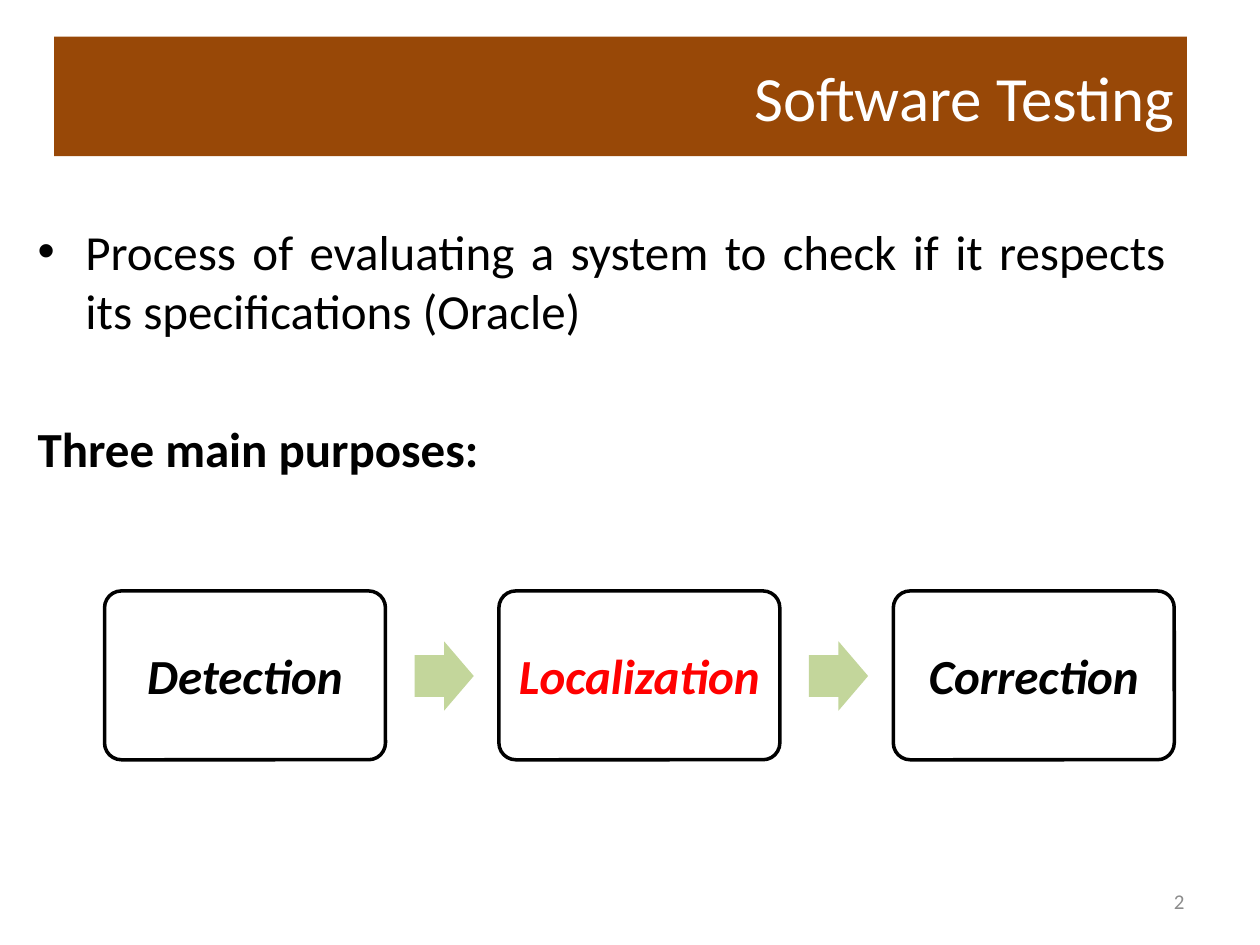
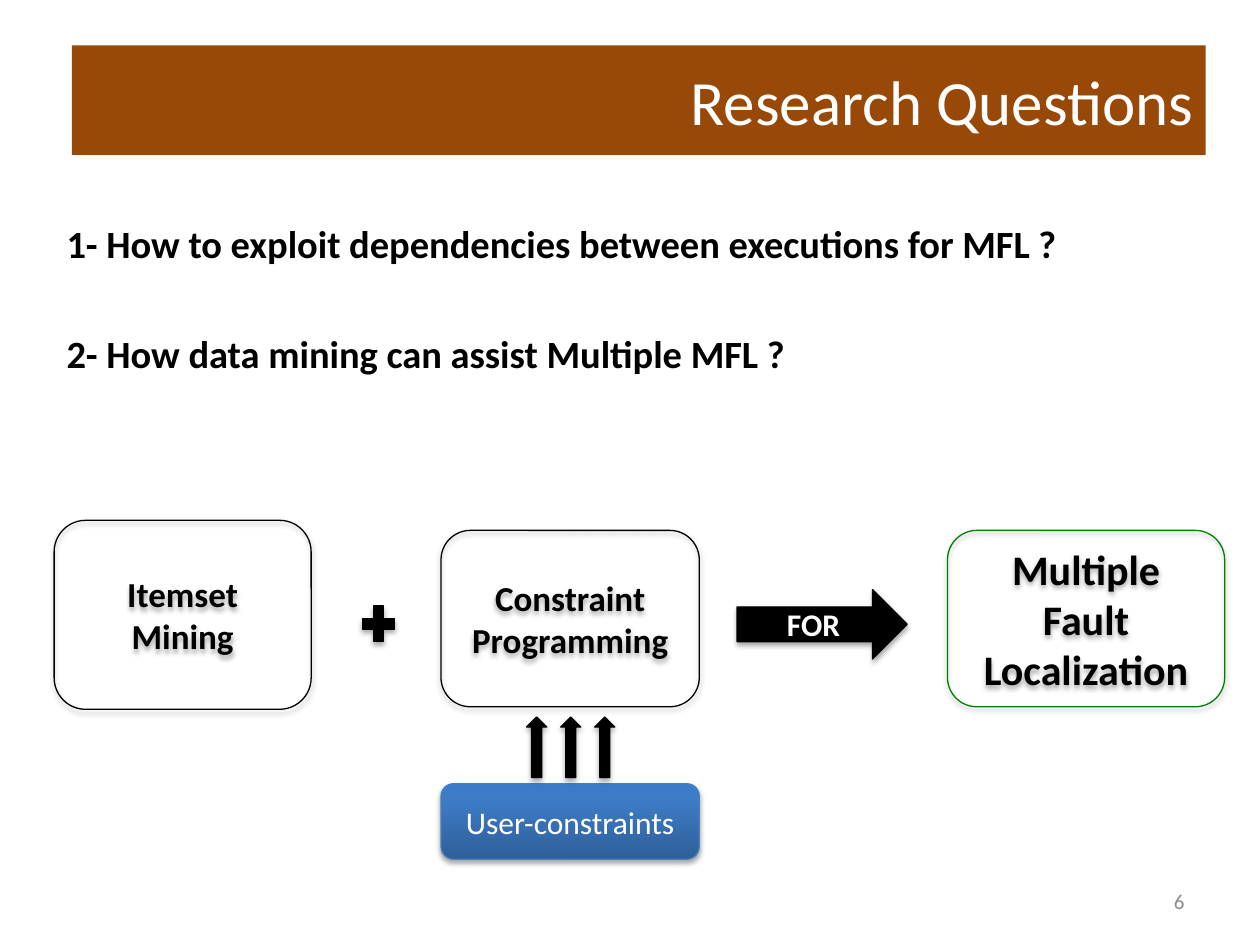
from copy import deepcopy
from dataclasses import dataclass, field
from typing import Any

from pptx import Presentation
from pptx.dml.color import RGBColor
from pptx.enum.shapes import MSO_SHAPE
from pptx.enum.text import MSO_ANCHOR, PP_ALIGN
from pptx.oxml.ns import qn
from pptx.oxml.xmlchemy import OxmlElement
from pptx.util import Inches, Pt

COLORS = {
    "band": "984807", "white": "FFFFFF", "black": "000000", "red": "FF0000",
    "green": "008000", "arrow": "C3D69B", "number": "8C8C8C",
    "blue_edge": "4B7EBC", "blue_low": "2F5F99", "blue_mid": "3D7CC7", "blue_top": "3A7CCB",
}
BLUE_GRADIENT = [(0, "blue_low"), (0.8, "blue_mid"), (1, "blue_top")]


@dataclass
class Style:
    size: float = 20
    color: str = "black"
    bold: bool = True
    italic: bool = False
    align: Any = PP_ALIGN.CENTER


@dataclass
class Figure:
    left: float
    top: float
    width: float
    height: float
    kind: Any = MSO_SHAPE.ROUNDED_RECTANGLE
    fill: str | list | None = None
    line: str | None = "black"
    line_width: float = 0.75
    adjustments: tuple[float, ...] = ()
    shadow: bool = True
    text: str = ""
    style: Style = field(default_factory=Style)
    inset: float = 0.1


TITLE = Style(36, "white", bold=False, align=PP_ALIGN.RIGHT)
NUMBER = Style(12, "number", bold=False, align=PP_ALIGN.RIGHT)
QUESTION = Style(22, align=PP_ALIGN.LEFT)


def rgb(name: str) -> RGBColor:
    return RGBColor.from_string(COLORS[name])


def assign(target: Any, values: dict[str, Any]) -> None:
    for name, value in values.items():
        setattr(target, name, value)


def write(para: Any, text: str, style: Style) -> None:
    para.alignment = style.align
    span = para.add_run()
    span.text = text
    assign(span.font, {"name": "Calibri", "size": Pt(style.size),
                       "bold": style.bold, "italic": style.italic})
    span.font.color.rgb = rgb(style.color)


def add_text(page: Any, left: float, top: float, width: float, height: float,
             text: str, style: Style, anchor: Any = MSO_ANCHOR.TOP) -> Any:
    box = page.shapes.add_textbox(Inches(left), Inches(top), Inches(width), Inches(height))
    assign(box.text_frame, {"word_wrap": True, "vertical_anchor": anchor})
    write(box.text_frame.paragraphs[0], text, style)
    return box.text_frame


def add_drop_shadow(shape: Any) -> None:
    shadow = OxmlElement("a:outerShdw")
    for name, value in {"blurRad": Pt(3.1), "dist": Pt(1.8), "dir": 90 * 60000,
                        "rotWithShape": 0}.items():
        shadow.set(name, str(int(value)))
    color = OxmlElement("a:srgbClr")
    color.set("val", COLORS["black"])
    alpha = OxmlElement("a:alpha")
    alpha.set("val", "35000")
    color.append(alpha)
    shadow.append(color)
    shape._element.spPr.find(qn("a:effectLst")).append(shadow)


def fill_gradient(shape: Any, stops: list[tuple[float, str]]) -> None:
    """Fill from bottom to top with three or more stops."""
    shape.fill.gradient()
    shape.fill.gradient_angle = 90
    stop_list = shape._element.spPr.find(".//" + qn("a:gsLst"))
    while len(stop_list) < len(stops):
        stop_list.append(deepcopy(stop_list[-1]))
    for stop, (position, name) in zip(shape.fill.gradient_stops, stops):
        stop.position = position
        stop.color.rgb = rgb(name)


def draw(page: Any, figure: Figure) -> None:
    shape = page.shapes.add_shape(figure.kind, Inches(figure.left), Inches(figure.top),
                                  Inches(figure.width), Inches(figure.height))
    shape.shadow.inherit = False
    for index, value in enumerate(figure.adjustments):
        shape.adjustments[index] = value
    if figure.fill is None:
        shape.fill.background()
    elif isinstance(figure.fill, list):
        fill_gradient(shape, figure.fill)
    else:
        shape.fill.solid()
        shape.fill.fore_color.rgb = rgb(figure.fill)
    if figure.line is None:
        shape.line.fill.background()
    else:
        shape.line.color.rgb = rgb(figure.line)
        shape.line.width = Pt(figure.line_width)
    if figure.shadow:
        add_drop_shadow(shape)
    if figure.text:
        frame = shape.text_frame
        assign(frame, {"word_wrap": True, "vertical_anchor": MSO_ANCHOR.MIDDLE,
                       "margin_left": Inches(figure.inset),
                       "margin_right": Inches(figure.inset)})
        write(frame.paragraphs[0], figure.text, figure.style)


def add_page(deck: Any, title: str, number: int, band: tuple[float, ...]) -> Any:
    page = deck.slides.add_slide(deck.slide_layouts[6])
    draw(page, Figure(*band, kind=MSO_SHAPE.RECTANGLE, fill="band", line=None,
                      shadow=False, text=title, style=TITLE))
    add_text(page, 7.17, 6.95, 2.33, 0.4, str(number), NUMBER, MSO_ANCHOR.MIDDLE)
    return page


def add_bullet(para: Any, indent: float) -> None:
    properties = para._p.get_or_add_pPr()
    properties.set("marL", str(Inches(indent)))
    properties.set("indent", str(-Inches(indent)))
    for tag, name, value in (("a:buFont", "typeface", "Arial"), ("a:buChar", "char", "•")):
        mark = OxmlElement(tag)
        mark.set(name, value)
        properties.append(mark)


def build_testing(deck: Any) -> None:
    page = add_page(deck, "Software Testing", 2, (0.43, 0.29, 8.99, 0.95))
    frame = add_text(
        page, 0.2, 1.71, 9.15, 2.4,
        "Process of evaluating a system to check if it respects its specifications (Oracle)",
        Style(28, bold=False, align=PP_ALIGN.JUSTIFY))
    definition, purposes = frame.paragraphs[0], frame.add_paragraph()
    definition.space_before = Pt(5.6)
    add_bullet(definition, 0.38)
    purposes.space_before = Pt(45)
    write(purposes, "Three main purposes:", Style(28, align=PP_ALIGN.JUSTIFY))

    step_pitch = 3.13
    steps = [("Detection", "black"), ("Localization", "red"), ("Correction", "black")]
    for index, (name, color) in enumerate(steps):
        left = 0.83 + index * step_pitch
        draw(page, Figure(left, 4.69, 2.23, 1.34, line_width=2, adjustments=(0.1,),
                          shadow=False, text=name, inset=0.08,
                          style=Style(28, color, italic=True)))
        if index < len(steps) - 1:
            draw(page, Figure(left + 2.46, 5.09, 0.47, 0.55, MSO_SHAPE.RIGHT_ARROW, "arrow",
                              None, adjustments=(0.6, 0.5), shadow=False))


def build_questions(deck: Any) -> None:
    page = add_page(deck, "Research Questions", 6, (0.57, 0.36, 9, 0.87))
    questions = ["1- How to exploit dependencies between executions for MFL ?",
                 "2- How data mining can assist Multiple MFL ?"]
    for index, question in enumerate(questions):
        add_text(page, 0.43, 1.7 + index * 0.87, 9.2, 0.47, question, QUESTION)

    figures = [
        Figure(0.43, 4.13, 2.04, 1.5, text="Itemset Mining"),
        Figure(3.5, 4.21, 2.05, 1.4, text="Constraint Programming"),
        Figure(2.83, 4.76, 0.35, 0.38, MSO_SHAPE.MATH_PLUS, "black"),
        Figure(5.85, 4.68, 1.35, 0.55, MSO_SHAPE.RIGHT_ARROW, "black",
               text="FOR", style=Style(18, "white")),
        Figure(7.52, 4.21, 2.2, 1.4, line="green",
               text="Multiple Fault Localization", style=Style(24)),
        Figure(3.5, 6.22, 2.05, 0.6, fill=BLUE_GRADIENT, line="blue_edge",
               text="User-constraints", style=Style(18, "white", bold=False)),
    ]
    figures += [Figure(4.18 + index * 0.27, 5.69, 0.16, 0.48, MSO_SHAPE.UP_ARROW, "black")
                for index in range(3)]
    for figure in figures:
        draw(page, figure)


def main() -> None:
    deck = Presentation()
    assign(deck, {"slide_width": Inches(10), "slide_height": Inches(7.5)})
    build_testing(deck)
    build_questions(deck)
    deck.save("out.pptx")


if __name__ == "__main__":
    main()
